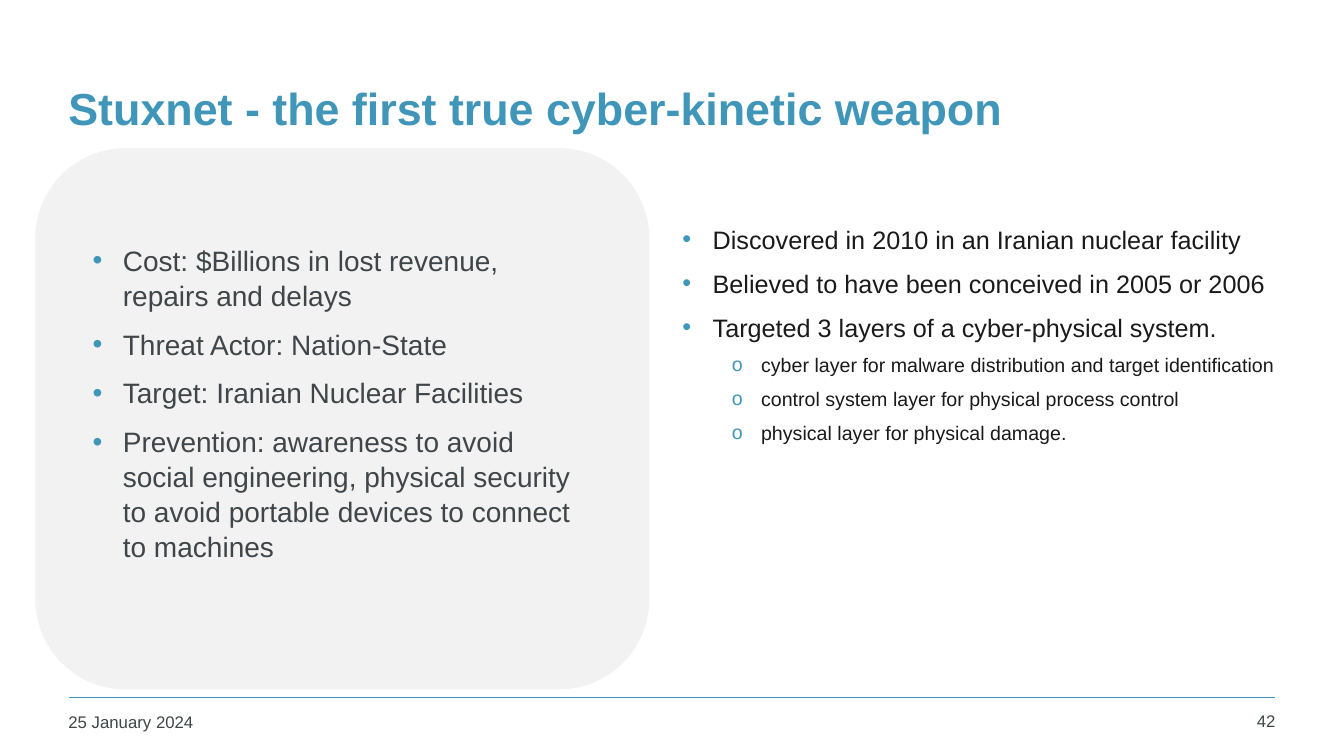
"""Build the slide on Stuxnet, the first true cyber-kinetic weapon."""
from dataclasses import dataclass

from lxml import etree
from pptx import Presentation
from pptx.dml.color import RGBColor
from pptx.enum import shapes, text
from pptx.oxml import ns
from pptx.util import Inches, Pt

BLUE = RGBColor(0x40, 0x96, 0xB8)
SLATE = RGBColor(0x3F, 0x45, 0x48)
BLACK = RGBColor(0x1A, 0x1A, 0x1A)
PALE = RGBColor(0xF2, 0xF2, 0xF2)
FONT = "Arial"


@dataclass(frozen=True)
class Bullet:
    mark: str
    level: int
    margin: float
    hanging: float


@dataclass(frozen=True)
class Line:
    words: str
    size: int
    color: RGBColor
    bullet: Bullet | None = None
    bold: bool = False
    align: text.PP_ALIGN = text.PP_ALIGN.LEFT


@dataclass(frozen=True)
class Block:
    left: float
    top: float
    width: float
    height: float
    lines: list[Line]
    anchor: text.MSO_ANCHOR = text.MSO_ANCHOR.TOP


DOT = Bullet("•", 0, 0.3, 0.3)
RING = Bullet("o", 1, 0.78, 0.29)

FACTS = [
    "Cost: $Billions in lost revenue, repairs and delays",
    "Threat Actor: Nation-State",
    "Target: Iranian Nuclear Facilities",
    "Prevention: awareness to avoid social engineering, physical security "
    "to avoid portable devices to connect to machines",
]
HISTORY = [
    "Discovered in 2010 in an Iranian nuclear facility",
    "Believed to have been conceived in 2005 or 2006",
    "Targeted 3 layers of a cyber-physical system.",
]
LAYERS = [
    "cyber layer for malware distribution and target identification",
    "control system layer for physical process control",
    "physical layer for physical damage.",
]
BLOCKS = [
    Block(0.58, 0.44, 12.09, 1.25,
          [Line("Stuxnet - the first true cyber-kinetic weapon", 32, BLUE, bold=True)],
          text.MSO_ANCHOR.MIDDLE),
    Block(0.58, 7.01, 2.94, 0.36, [Line("25 January 2024", 12, SLATE)]),
    Block(11.81, 7, 0.94, 0.37, [Line("42", 12, SLATE, align=text.PP_ALIGN.RIGHT)]),
    Block(6.67, 2.16, 6.09, 4.03,
          [Line(words, 18, BLACK, DOT) for words in HISTORY]
          + [Line(words, 14, BLACK, RING) for words in LAYERS]),
    Block(0.82, 2.35, 5.02, 2.09, [Line(words, 20, SLATE, DOT) for words in FACTS]),
]


def add_bullet(para, bullet: Bullet) -> None:
    """Give a paragraph a hanging blue bullet."""
    para.level = bullet.level
    para.line_spacing = 1.04
    props = para._p.get_or_add_pPr()
    props.set("marL", str(Inches(bullet.margin)))
    props.set("indent", str(-Inches(bullet.hanging)))
    color = etree.SubElement(props, ns.qn("a:buClr"))
    etree.SubElement(color, ns.qn("a:srgbClr"), val=str(BLUE))
    etree.SubElement(props, ns.qn("a:buFont"), typeface=FONT)
    etree.SubElement(props, ns.qn("a:buChar"), char=bullet.mark)


def add_block(page, block: Block) -> None:
    """Draw a text box with one paragraph per line."""
    box = page.shapes.add_textbox(Inches(block.left), Inches(block.top),
                                  Inches(block.width), Inches(block.height))
    frame = box.text_frame
    frame.word_wrap = True
    frame.vertical_anchor = block.anchor
    for index, line in enumerate(block.lines):
        para = frame.add_paragraph() if index else frame.paragraphs[0]
        para.text = line.words
        para.alignment = line.align
        if index:
            para.space_before = Pt(line.size / 2)
        if line.bullet:
            add_bullet(para, line.bullet)
        para.font.name = FONT
        para.font.size = Pt(line.size)
        para.font.bold = line.bold
        para.font.color.rgb = line.color


def add_rule(page) -> None:
    """Draw the footer rule."""
    rule = page.shapes.add_connector(shapes.MSO_CONNECTOR.STRAIGHT, Inches(0.68),
                                     Inches(6.92), Inches(12.65), Inches(6.92))
    rule.line.color.rgb = BLUE
    rule.line.width = Pt(1)
    etree.SubElement(rule._element.spPr, ns.qn("a:effectLst"))


def add_panel(page) -> None:
    """Draw the pale rounded panel behind the facts."""
    panel = page.shapes.add_shape(shapes.MSO_SHAPE.ROUNDED_RECTANGLE, Inches(0.35),
                                  Inches(1.47), Inches(6.09), Inches(5.37))
    panel.shadow.inherit = False
    panel.fill.solid()
    panel.fill.fore_color.rgb = PALE
    panel.line.fill.background()


def main() -> None:
    """Assemble and save the deck."""
    deck = Presentation()
    deck.slide_width = Inches(13.33)
    deck.slide_height = Inches(7.5)
    page = deck.slides.add_slide(deck.slide_layouts[6])
    add_rule(page)
    add_panel(page)
    for block in BLOCKS:
        add_block(page, block)
    deck.save("out.pptx")


if __name__ == "__main__":
    main()
